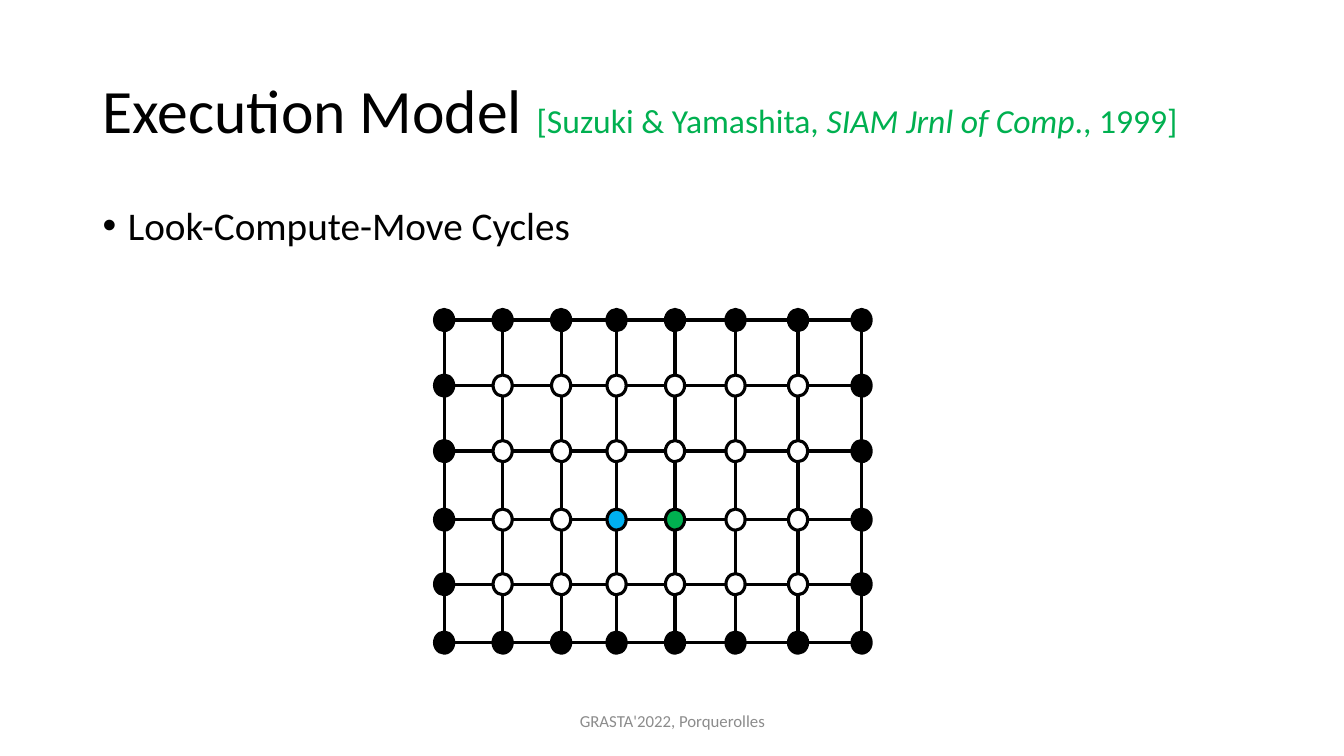
import pptx
import pptx.dml.color
import pptx.enum.shapes
import pptx.enum.text
import pptx.oxml.ns
import pptx.util
from lxml import etree

Inches = pptx.util.Inches
Pt = pptx.util.Pt
ALIGN = pptx.enum.text.PP_ALIGN
ANCHOR = pptx.enum.text.MSO_ANCHOR
SHAPE = pptx.enum.shapes.MSO_SHAPE
CONNECTOR = pptx.enum.shapes.MSO_CONNECTOR
qn = pptx.oxml.ns.qn

BLACK, WHITE, GREEN, BLUE, GRAY = "000000", "FFFFFF", "00B050", "00B0F0", "8C8C8C"


def color(value):
    return pptx.dml.color.RGBColor.from_string(value)


class Deck:
    font = "Calibri"
    line_width = 2.25

    def __init__(self, width, height):
        self.prs = pptx.Presentation()
        self.prs.slide_width = Inches(width)
        self.prs.slide_height = Inches(height)
        self.s = self.prs.slides.add_slide(self.prs.slide_layouts[6])

    def text(self, x, y, w, h, runs, anchor=ANCHOR.TOP, align=ALIGN.LEFT, spacing=1.0):
        """Add one paragraph; each run is (text, size, colour, italic)."""
        sp = self.s.shapes.add_textbox(Inches(x), Inches(y), Inches(w), Inches(h))
        tf = sp.text_frame
        tf.word_wrap = True
        tf.vertical_anchor = anchor
        p = tf.paragraphs[0]
        p.alignment = align
        p.line_spacing = spacing
        for text, size, fill, italic in runs:
            r = p.add_run()
            r.text = text
            r.font.name = self.font
            r.font.size = Pt(size)
            r.font.italic = italic
            r.font.color.rgb = color(fill)
        return p

    def bullet(self, x, y, w, h, text, size, indent):
        p = self.text(x, y, w, h, [(text, size, BLACK, False)], spacing=0.9)
        p.space_before = Pt(10)
        pPr = p._p.get_or_add_pPr()
        pPr.set("marL", str(Inches(indent)))
        pPr.set("indent", str(-Inches(indent)))
        etree.SubElement(pPr, qn("a:buFont")).set("typeface", "Arial")
        etree.SubElement(pPr, qn("a:buChar")).set("char", "•")

    def node(self, x, y, w, h, fill):
        sp = self.s.shapes.add_shape(SHAPE.OVAL, Inches(x), Inches(y), Inches(w), Inches(h))
        sp.shadow.inherit = False
        sp.fill.solid()
        sp.fill.fore_color.rgb = color(fill)
        sp.line.color.rgb = color(BLACK)
        sp.line.width = Pt(self.line_width)

    def edge(self, x1, y1, x2, y2):
        cn = self.s.shapes.add_connector(
            CONNECTOR.STRAIGHT, Inches(x1), Inches(y1), Inches(x2), Inches(y2))
        cn.line.color.rgb = color(BLACK)
        cn.line.width = Pt(self.line_width)
        etree.SubElement(cn._element.spPr, qn("a:effectLst"))


def draw_grid(deck):
    node_w, node_h = 0.19, 0.21
    lefts = [4.31, 4.89, 5.47, 6.02, 6.6, 7.2, 7.82, 8.45]
    tops = [3.07, 3.72, 4.37, 5.05, 5.69, 6.27]
    robots = {(3, 3): BLUE, (3, 4): GREEN}

    # Edges between neighbouring nodes
    for y in tops:
        mid = y + node_h / 2
        for x, next_x in zip(lefts, lefts[1:]):
            deck.edge(x + node_w, mid, next_x, mid)
    for x in lefts:
        mid = x + node_w / 2
        for y, next_y in zip(tops, tops[1:]):
            deck.edge(mid, y + node_h, mid, next_y)

    # Nodes: black border, white interior, two coloured robots
    for row, y in enumerate(tops):
        for col, x in enumerate(lefts):
            border = row in (0, len(tops) - 1) or col in (0, len(lefts) - 1)
            fill = BLACK if border else robots.get((row, col), WHITE)
            deck.node(x, y, node_w, node_h, fill)


def main():
    deck = Deck(13.33, 7.5)

    # Title with citation
    deck.text(0.92, 0.4, 11.5, 1.45, [
        ("Execution Model ", 44, BLACK, False),
        ("[Suzuki & Yamashita, ", 24, GREEN, False),
        ("SIAM Jrnl of Comp", 24, GREEN, True),
        ("., 1999]", 24, GREEN, False),
    ], anchor=ANCHOR.MIDDLE, spacing=0.9)

    # Body
    deck.bullet(0.92, 2, 11.5, 0.6, "Look-Compute-Move Cycles", 28, 0.25)
    draw_grid(deck)

    # Footer
    deck.text(4.42, 6.95, 4.5, 0.4, [("GRASTA'2022, Porquerolles", 12, GRAY, False)],
              anchor=ANCHOR.MIDDLE, align=ALIGN.CENTER)

    deck.prs.save("out.pptx")


if __name__ == "__main__":
    main()
